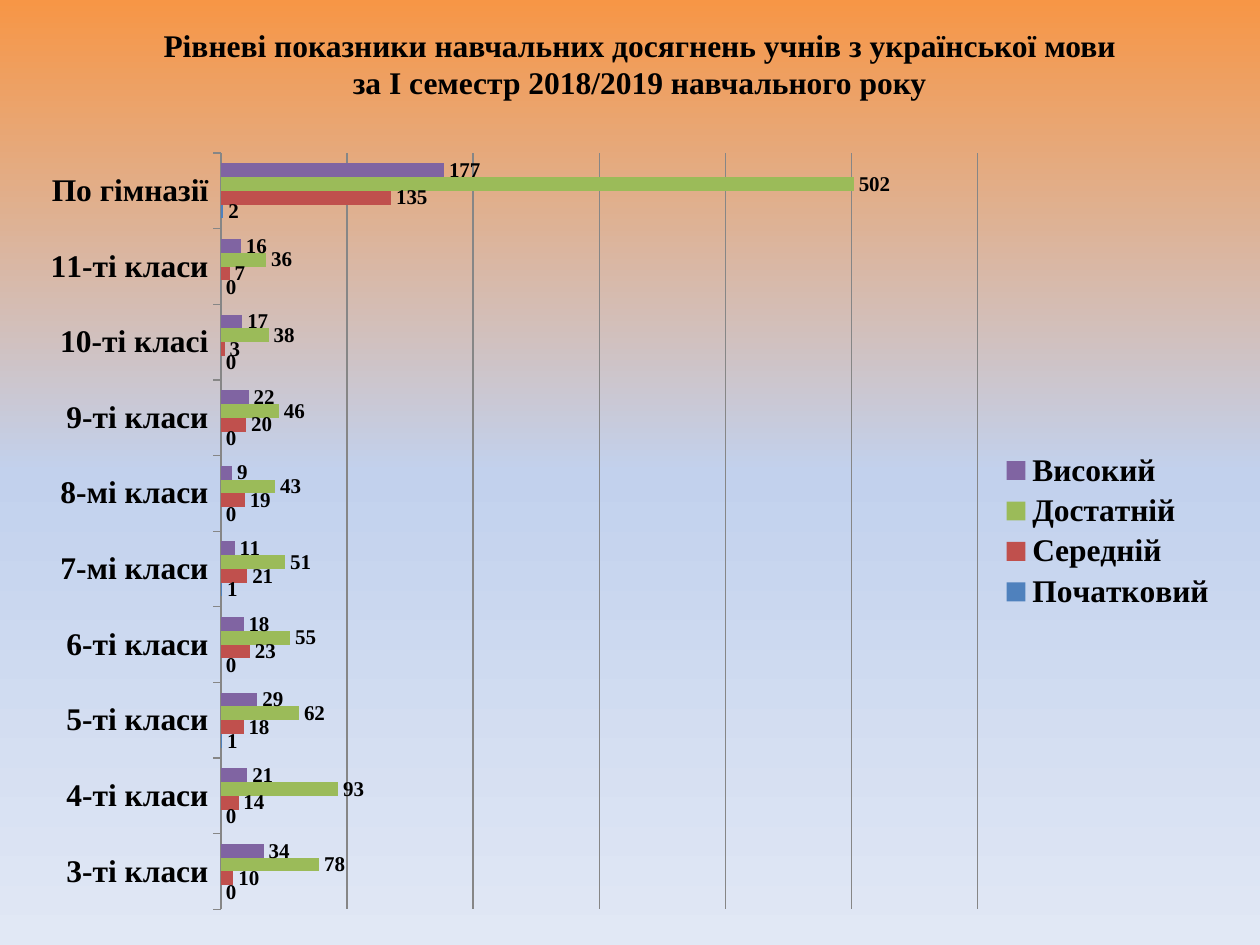
"""Build a slide with a bar chart of pupils' grade levels by class."""
from copy import deepcopy

from lxml.etree import SubElement
from pptx import Presentation
from pptx.chart.data import CategoryChartData as Data
from pptx.dml.color import RGBColor
from pptx.enum.chart import (
    XL_CHART_TYPE as Kind,
    XL_LABEL_POSITION as Spot,
    XL_LEGEND_POSITION as Side,
    XL_TICK_MARK as Tick,
)
from pptx.enum.text import MSO_ANCHOR as Anchor, PP_ALIGN as Align
from pptx.oxml.ns import qn
from pptx.util import Cm, Pt

FACE = "Times New Roman"
BLACK = RGBColor(0x00, 0x00, 0x00)
GREY = RGBColor(0x86, 0x86, 0x86)
SKY = (
    (0, RGBColor(0xF7, 0x96, 0x46)),
    (0.5, RGBColor(0xC2, 0xD1, 0xED)),
    (1, RGBColor(0xE1, 0xE8, 0xF5)),
)
TITLE = (
    "Рівневі показники навчальних досягнень учнів з української мови\v"
    "за І семестр 2018/2019 навчального року"
)
FORMS = (
    "3-ті класи", "4-ті класи", "5-ті класи", "6-ті класи", "7-мі класи",
    "8-мі класи", "9-ті класи", "10-ті класі", "11-ті класи", "По гімназії",
)
LEVELS = (
    ("Початковий", RGBColor(0x4F, 0x81, 0xBD),
     (0, 0, 1, 0, 1, 0, 0, 0, 0, 2)),
    ("Середній", RGBColor(0xC0, 0x50, 0x4D),
     (10, 14, 18, 23, 21, 19, 20, 3, 7, 135)),
    ("Достатній", RGBColor(0x9B, 0xBB, 0x59),
     (78, 93, 62, 55, 51, 43, 46, 38, 36, 502)),
    ("Високий", RGBColor(0x80, 0x64, 0xA2),
     (34, 21, 29, 18, 11, 9, 22, 17, 16, 177)),
)


def style(font, size):
    font.name, font.size, font.bold = FACE, Pt(size), True
    font.color.rgb = BLACK


def rule(line):
    line.color.rgb, line.width = GREY, Pt(0.75)


def paint(slide):
    fill = slide.background.fill
    fill.gradient()
    fill.gradient_angle = 270
    stops = next(slide.element.iter(qn("a:gsLst")))
    stops.append(deepcopy(stops[-1]))
    for stop, (place, color) in zip(fill.gradient_stops, SKY):
        stop.position, stop.color.rgb = place, color


def add_title(slide):
    frame = slide.shapes.add_textbox(
        Cm(1.19), Cm(0.58), Cm(23.42), Cm(1.4)).text_frame
    frame.word_wrap = True
    frame.vertical_anchor = Anchor.MIDDLE
    para = frame.paragraphs[0]
    para.text, para.alignment = TITLE, Align.CENTER
    style(para.font, 18)


def place_plot(chart, **box):
    area = next(chart.element.iter(qn("c:plotArea")))
    for old in area.findall(qn("c:layout")):
        area.remove(old)
    layout = SubElement(area, qn("c:layout"))
    area.insert(0, layout)
    manual = SubElement(layout, qn("c:manualLayout"))
    parts = {"layoutTarget": "inner", "xMode": "edge", "yMode": "edge", **box}
    for name, value in parts.items():
        SubElement(manual, qn(f"c:{name}")).set("val", str(value))


def set_axes(chart):
    forms, count = chart.category_axis, chart.value_axis
    forms.major_tick_mark = Tick.OUTSIDE
    style(forms.tick_labels.font, 18)
    rule(forms.format.line)
    count.minimum_scale, count.maximum_scale, count.major_unit = 0, 600, 100
    count.has_major_gridlines = True
    rule(count.major_gridlines.format.line)
    count.visible = False


def set_bars(plot):
    plot.gap_width, plot.overlap = 150, 0
    plot.vary_by_categories = False
    for bars, (_, color, _) in zip(plot.series, LEVELS):
        bars.format.fill.solid()
        bars.format.fill.fore_color.rgb = color
        labels = bars.data_labels
        labels.show_value = True
        labels.position = Spot.OUTSIDE_END
        style(labels.font, 12)


def add_bars(slide):
    data = Data()
    data.categories = FORMS
    for name, _, values in LEVELS:
        data.add_series(name, values)
    chart = slide.shapes.add_chart(
        Kind.BAR_CLUSTERED, Cm(0.58), Cm(2.77), Cm(24.21), Cm(15.88), data
    ).chart
    chart.has_title = False
    chart.font.name, chart.font.size = "Calibri", Pt(18)
    chart.font.color.rgb = BLACK
    chart.has_legend = True
    chart.legend.position = Side.RIGHT
    chart.legend.include_in_layout = False
    style(chart.legend.font, 18)
    set_axes(chart)
    set_bars(chart.plots[0])
    place_plot(chart, x=0.16, y=0.02, w=0.63, h=0.96)


def main():
    deck = Presentation()
    deck.slide_width, deck.slide_height = Cm(25.4), Cm(19.05)
    slide = deck.slides.add_slide(deck.slide_layouts[6])
    paint(slide)
    add_title(slide)
    add_bars(slide)
    deck.save("out.pptx")


if __name__ == "__main__":
    main()
